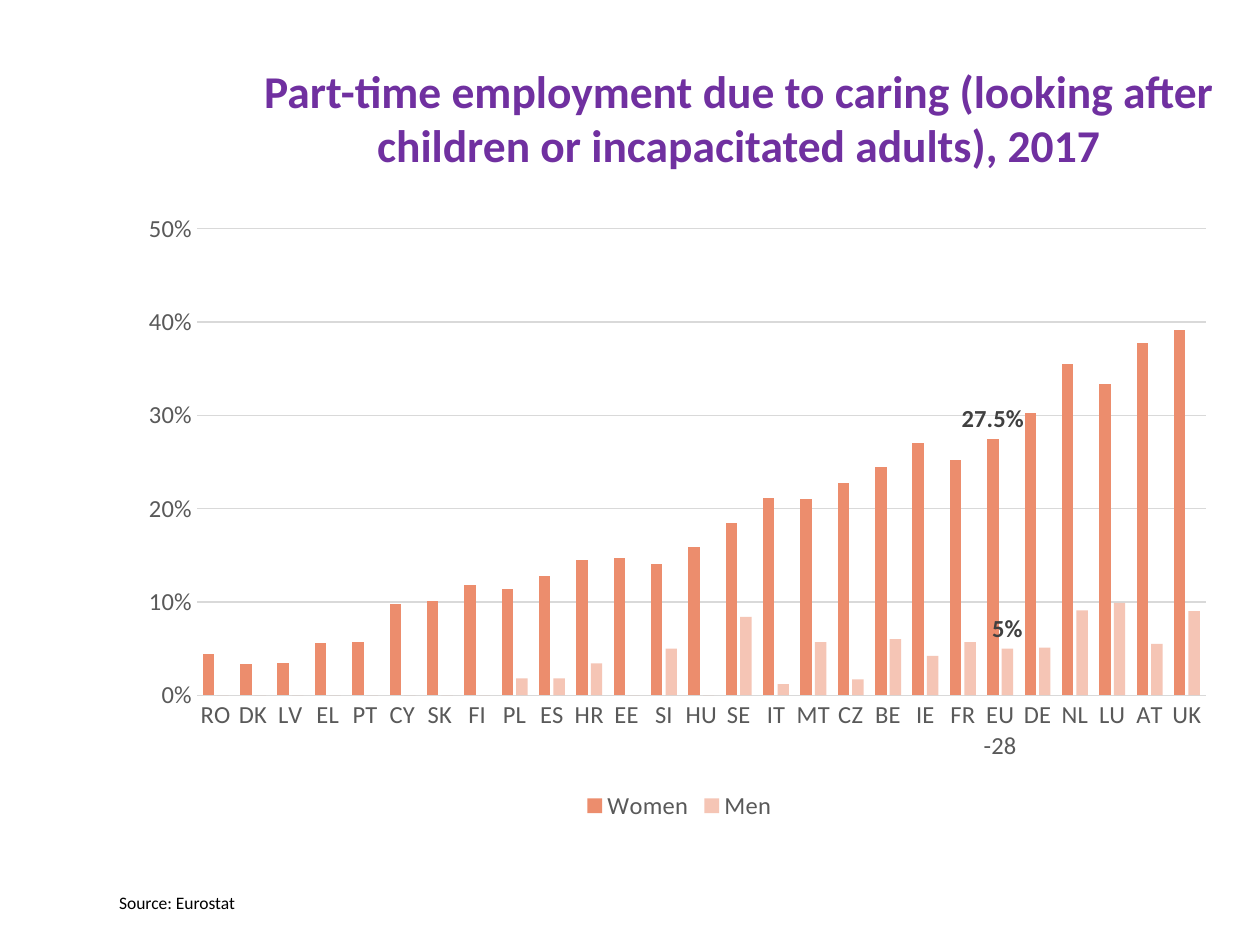
from lxml.etree import SubElement as Sub
from pptx import Presentation
from pptx.chart.data import CategoryChartData as Data
from pptx.dml.color import RGBColor as RGB
from pptx.enum.chart import XL_CHART_TYPE as Kind, XL_LABEL_POSITION as Spot
from pptx.enum.chart import XL_LEGEND_POSITION as Side, XL_TICK_MARK as Tick
from pptx.enum.text import MSO_ANCHOR as Anchor, PP_ALIGN as Align
from pptx.oxml import parse_xml
from pptx.oxml.ns import nsdecls, qn
from pptx.util import Pt

FONT = "Calibri"
COLORS = {"title": "7030A0", "body": "000000", "axis": "595959",
          "grid": "D9D9D9", "label": "404040", "bar": "EC8D6D"}

STATES = ("RO DK LV EL PT CY SK FI PL ES HR EE SI HU SE IT MT CZ BE IE FR "
          "EU-28 DE NL LU AT UK").split()
WOMEN = [.044, .033, .035, .056, .057, .098, .101, .118, .114, .128, .145,
         .147, .141, .159, .185, .211, .21, .227, .245, .27, .252, .275,
         .302, .355, .334, .377, .391]
MEN = [0] * 8 + [.018, .018, .034, 0, .05, 0, .084, .012, .057, .017, .06,
                 .042, .057, .05, .051, .091, .099, .055, .09]


def style(font, size, color, bold=False):
    font.name, font.size, font.bold = FONT, Pt(size), bold
    font.color.rgb = RGB.from_string(COLORS[color])


def add_text(slide, box, text, size=10, color="body", bold=False,
             align=Align.LEFT, anchor=Anchor.TOP):
    frame = slide.shapes.add_textbox(*map(Pt, box)).text_frame
    frame.word_wrap = True
    frame.vertical_anchor = anchor
    para = frame.paragraphs[0]
    para.alignment = align
    run = para.add_run()
    run.text = text
    style(run.font, size, color, bold)


def draw_line(line):
    line.color.rgb = RGB.from_string(COLORS["grid"])
    line.width = Pt(0.75)


def set_plot(chart, x, y, w, h):
    """Fix the inner plot area, as shares of the chart box."""
    area = chart.plots[0]._element.getparent()
    for old in area.findall(qn("c:layout")):
        area.remove(old)
    area.insert(0, parse_xml(
        f'<c:layout {nsdecls("c")}><c:manualLayout>'
        '<c:layoutTarget val="inner"/><c:xMode val="edge"/><c:yMode val="edge"/>'
        f'<c:x val="{x}"/><c:y val="{y}"/><c:w val="{w}"/><c:h val="{h}"/>'
        '</c:manualLayout></c:layout>'))


def add_bars(slide, box):
    data = Data()
    data.categories = STATES
    data.add_series("Women", WOMEN, number_format="0.0%")
    data.add_series("Men", MEN, number_format="0%")
    chart = slide.shapes.add_chart(
        Kind.COLUMN_CLUSTERED, *map(Pt, box), data).chart
    style(chart.font, 11, "body")
    chart.has_title = False
    set_plot(chart, 0.06, 0.04, 0.92, 0.75)

    # Legend
    chart.has_legend = True
    chart.legend.position = Side.BOTTOM
    chart.legend.include_in_layout = False
    style(chart.legend.font, 14, "axis")

    # Axes
    cat, val = chart.category_axis, chart.value_axis
    for axis in (cat, val):
        axis.major_tick_mark = axis.minor_tick_mark = Tick.NONE
        style(axis.tick_labels.font, 14, "axis")
    draw_line(cat.format.line)
    val.format.line.fill.background()
    val.minimum_scale, val.maximum_scale, val.major_unit = 0, 0.5, 0.1
    val.tick_labels.number_format = "0%"
    val.tick_labels.number_format_is_linked = False
    draw_line(val.major_gridlines.format.line)

    # Bars, with the EU average labelled
    plot = chart.plots[0]
    plot.gap_width, plot.overlap, plot.vary_by_categories = 100, -27, False
    for bars in plot.series:
        bars.invert_if_negative = False
        bars.format.fill.solid()
        bars.format.fill.fore_color.rgb = RGB.from_string(COLORS["bar"])
        bars.data_labels.show_value = False
        label = bars.points[STATES.index("EU-28")].data_label
        style(label.font, 14, "label", bold=True)
        label.position = Spot.OUTSIDE_END
    tint = plot.series[1]._element.find(".//" + qn("a:srgbClr"))
    Sub(tint, qn("a:alpha"), val="50000")


def main():
    deck = Presentation()
    deck.slide_width, deck.slide_height = Pt(720), Pt(540)
    slide = deck.slides.add_slide(deck.slide_layouts[6])
    add_text(slide, (125, 27, 595, 80),
             "Part-time employment due to caring (looking after children or "
             "incapacitated adults), 2017", size=26, color="title", bold=True,
             align=Align.CENTER, anchor=Anchor.MIDDLE)
    add_bars(slide, (75, 116.5, 626.5, 355.5))
    add_text(slide, (61, 506, 636.5, 19.5), "Source: Eurostat")
    deck.save("out.pptx")


if __name__ == "__main__":
    main()
